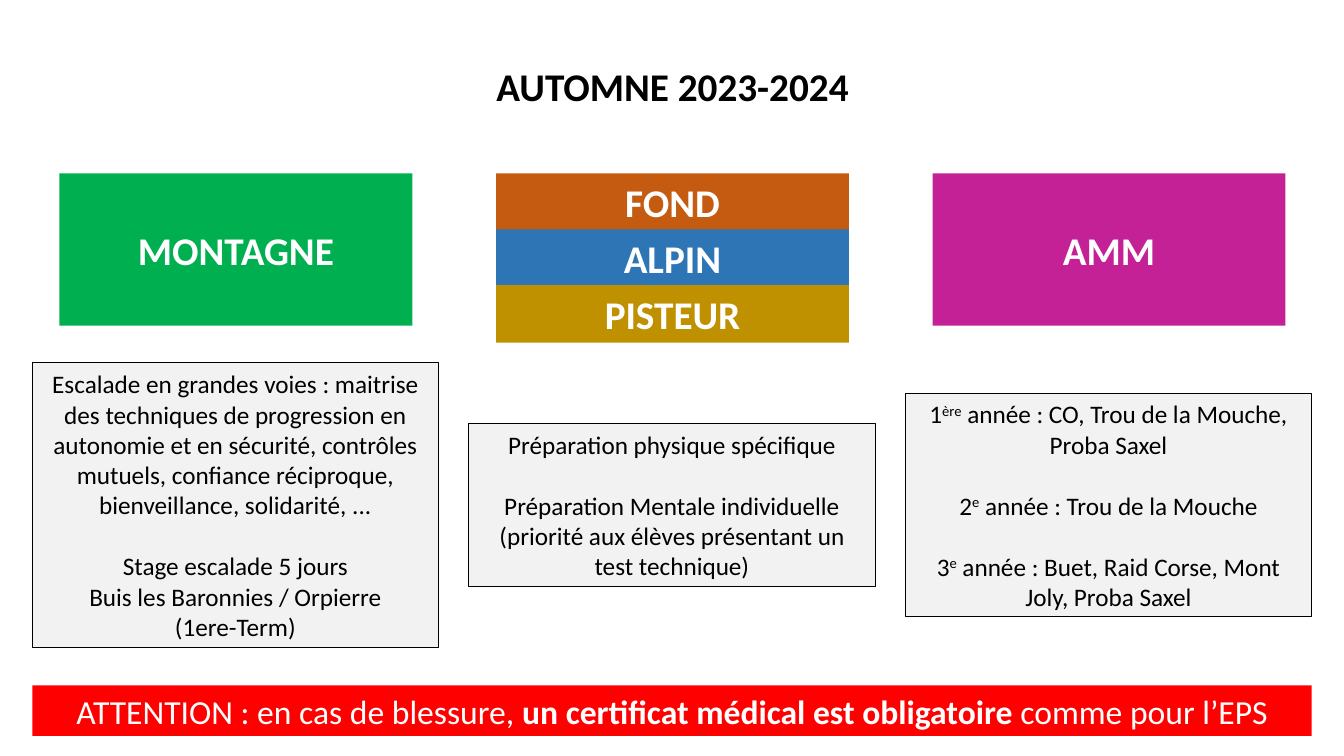
import dataclasses

import pptx
import pptx.dml.color
import pptx.enum.shapes
import pptx.enum.text
import pptx.util

Inches = pptx.util.Inches
Pt = pptx.util.Pt
CENTER = pptx.enum.text.PP_ALIGN.CENTER
MIDDLE = pptx.enum.text.MSO_ANCHOR.MIDDLE


@dataclasses.dataclass(frozen=True)
class Theme:
    font: str = "Calibri"
    heading_size: int = 28
    warning_size: int = 24
    note_size: int = 18
    note_gap: int = 22
    black: str = "000000"
    white: str = "FFFFFF"
    note_fill: str = "F2F2F2"
    montagne: str = "00B050"
    fond: str = "C55A11"
    alpin: str = "2E75B6"
    pisteur: str = "BF9000"
    amm: str = "C32195"
    warning: str = "FF0000"


THEME = Theme()
BOLD = {"bold": True}
SUPERSCRIPT = {"baseline": "30000"}

COLUMNS = [
    {
        "bands": [("MONTAGNE", THEME.montagne)],
        "bands_height": 1.51,
        "note_height": 2.83,
        "note": [
            [[("Escalade en grandes voies : maitrise des techniques de progression en "
               "autonomie et en sécurité, contrôles mutuels, confiance réciproque, "
               "bienveillance, solidarité, ...", {})]],
            [[("Stage escalade 5 jours", {})],
             [("Buis les Baronnies / Orpierre", {})],
             [("(1ere-Term)", {})]],
        ],
    },
    {
        "bands": [("FOND", THEME.fond), ("ALPIN", THEME.alpin), ("PISTEUR", THEME.pisteur)],
        "bands_height": 1.68,
        "note_height": 1.62,
        "note": [
            [[("Préparation physique spécifique", {})]],
            [[("Préparation Mentale individuelle (priorité aux élèves présentant un "
               "test technique)", {})]],
        ],
    },
    {
        "bands": [("AMM", THEME.amm)],
        "bands_height": 1.51,
        "note_height": 2.22,
        "note": [
            [[("1", {}), ("ère", SUPERSCRIPT),
              (" année : CO, Trou de la Mouche, Proba Saxel", {})]],
            [[("2", {}), ("e", SUPERSCRIPT), (" année : Trou de la Mouche", {})]],
            [[("3", {}), ("e", SUPERSCRIPT),
              (" année : Buet, Raid Corse, Mont Joly, Proba Saxel", {})]],
        ],
    },
]


def apply_format(target, values):
    for name, value in values.items():
        setattr(target, name, value)


def color(code):
    return pptx.dml.color.RGBColor.from_string(code)


def write_text(frame, groups, size, ink):
    apply_format(frame, {"word_wrap": True, "vertical_anchor": MIDDLE,
                         "auto_size": pptx.enum.text.MSO_AUTO_SIZE.NONE})
    lines = [(group_index > 0 and line_index == 0, runs)
             for group_index, group in enumerate(groups)
             for line_index, runs in enumerate(group)]
    for index, (opens_group, runs) in enumerate(lines):
        paragraph = frame.add_paragraph() if index else frame.paragraphs[0]
        gap = THEME.note_gap if opens_group else 0
        apply_format(paragraph, {"alignment": CENTER, "space_before": Pt(gap)})
        for text, style in runs:
            run = paragraph.add_run()
            run.text = text
            apply_format(run.font, {"name": THEME.font, "size": Pt(size),
                                    "bold": style.get("bold", False)})
            run.font.color.rgb = color(ink)
            if "baseline" in style:
                run.font._element.set("baseline", style["baseline"])


def add_panel(slide, box, fill, groups, size, ink, outline=None):
    panel = slide.shapes.add_shape(pptx.enum.shapes.MSO_SHAPE.RECTANGLE, *map(Inches, box))
    panel.shadow.inherit = False
    panel.fill.solid()
    panel.fill.fore_color.rgb = color(fill)
    if outline:
        panel.line.color.rgb = color(outline)
        panel.line.width = Pt(0.75)
    else:
        panel.line.fill.background()
    write_text(panel.text_frame, groups, size, ink)


def add_title(slide, box):
    title = slide.shapes.title
    names = ("left", "top", "width", "height")
    apply_format(title, dict(zip(names, map(Inches, box))))
    write_text(title.text_frame, [[[("AUTOMNE 2023-2024", BOLD)]]],
               THEME.heading_size, THEME.black)


def add_bands(slide, box, bands):
    left, top, width, height = box
    band_height = height if len(bands) == 1 else 0.57
    step = (height - band_height) / max(len(bands) - 1, 1)
    for index, (label, fill) in enumerate(bands):
        add_panel(slide, (left, top + index * step, width, band_height), fill,
                  [[[(label, BOLD)]]], THEME.heading_size, THEME.white)


def add_column(slide, box, column):
    left, top, width, height = box
    inset = 0.27
    note_middle = top + 3.29
    note_height = column["note_height"]
    add_bands(slide, (left + inset, top, width - 2 * inset + 0.01, column["bands_height"]),
              column["bands"])
    add_panel(slide, (left, note_middle - note_height / 2, width, note_height),
              THEME.note_fill, column["note"], THEME.note_size, THEME.black, THEME.black)


def add_warning(slide, box):
    sentence = [("ATTENTION : en cas de blessure, ", {}),
                ("un certificat médical est obligatoire ", BOLD),
                ("comme pour l’EPS", {})]
    add_panel(slide, box, THEME.warning, [[sentence]], THEME.warning_size, THEME.white)


def main():
    deck = pptx.Presentation()
    apply_format(deck, {"slide_width": Inches(13.33), "slide_height": Inches(7.5)})
    slide = deck.slides.add_slide(deck.slide_layouts.get_by_name("Title Only"))
    add_title(slide, (2.8, 0.57, 7.74, 0.57))
    for index, column in enumerate(COLUMNS):
        add_column(slide, (0.32 + 4.33 * index, 1.72, 4.03, 4.71), column)
    add_warning(slide, (0.32, 6.8, 12.69, 0.5))
    deck.save("out.pptx")


if __name__ == "__main__":
    main()
